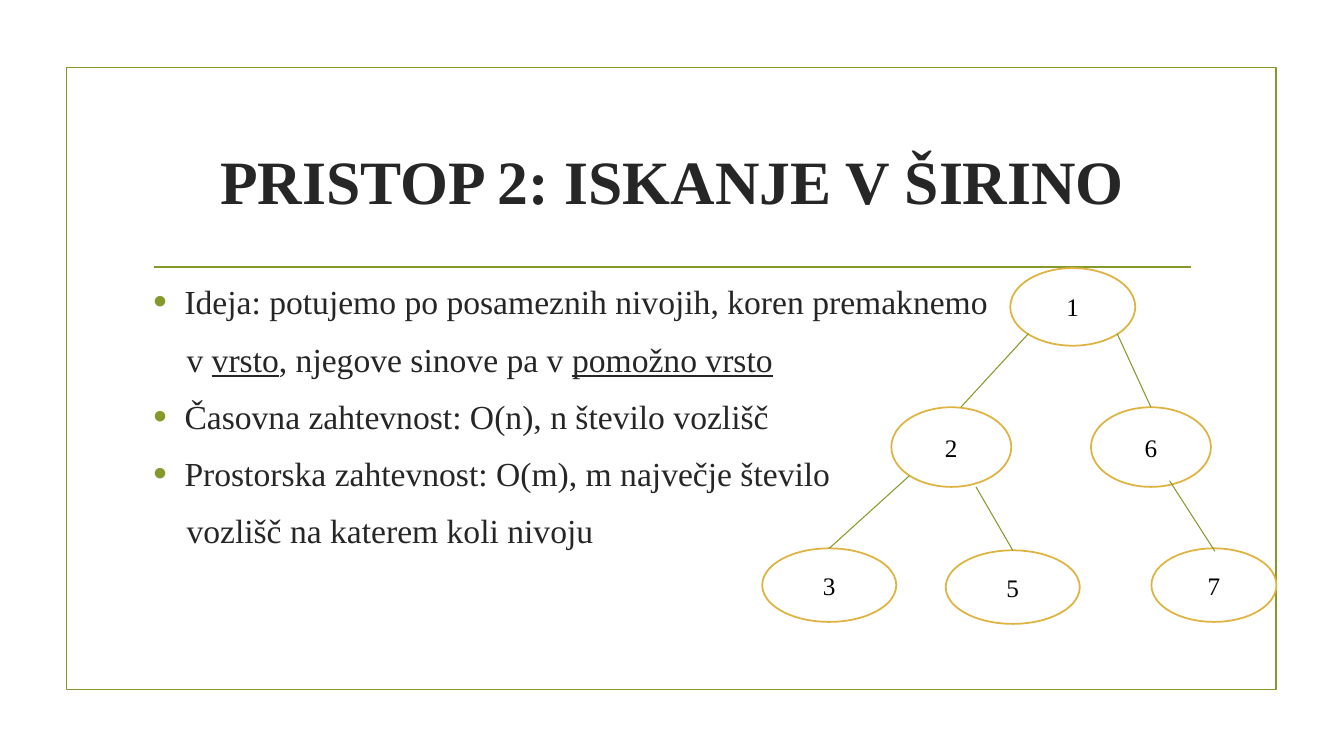
from dataclasses import dataclass
from typing import Optional

from lxml.etree import SubElement
from pptx import Presentation
from pptx.dml.color import RGBColor as RGB
from pptx.enum.shapes import MSO_CONNECTOR as CONN, MSO_SHAPE as SHAPE
from pptx.enum.text import MSO_ANCHOR as ANCHOR, MSO_AUTO_SIZE as AUTO, PP_ALIGN as ALIGN
from pptx.oxml.ns import qn
from pptx.util import Emu, Pt

PX = 9144


@dataclass(frozen=True)
class Theme:
    font: str = "Times New Roman"
    ink: str = "262626"
    node_ink: str = "000000"
    paper: str = "FFFFFF"
    green: str = "83992A"
    gold: str = "DEB340"
    title: int = 44
    body: int = 24
    node: int = 18
    outline: float = 1.25
    edge: float = 0.75
    gap: int = 6


@dataclass(frozen=True)
class Span:
    text: str
    underline: bool = False


@dataclass(frozen=True)
class Line:
    spans: tuple[Span, ...]
    bullet: bool = False


@dataclass(frozen=True)
class Node:
    label: str
    x: int
    y: int
    w: int
    h: int


@dataclass(frozen=True)
class Edge:
    x1: int
    y1: int
    x2: int
    y2: int
    child: Optional[str] = None


THEME = Theme()

LINES = (
    Line((Span("Ideja: potujemo po posameznih nivojih, koren premaknemo"),), True),
    Line((Span("v "), Span("vrsto", True), Span(", njegove sinove pa v "),
          Span("pomožno vrsto", True))),
    Line((Span("Časovna zahtevnost: O(n), n število vozlišč"),), True),
    Line((Span("Prostorska zahtevnost: O(m), m največje število"),), True),
    Line((Span("vozlišč na katerem koli nivoju"),)),
)

NODES = (
    Node("1", 1002, 266, 124, 77),
    Node("2", 884, 404, 119, 79),
    Node("6", 1082, 404, 119, 79),
    Node("3", 756, 544, 133, 73),
    Node("5", 938, 546, 133, 73),
    Node("7", 1142, 544, 124, 73),
)

EDGES = (
    Edge(1020, 331, 953, 404),
    Edge(1108, 331, 1142, 404, "6"),
    Edge(968, 483, 1004, 546, "5"),
    Edge(902, 472, 822, 544, "3"),
    Edge(1160, 477, 1205, 547),
)


def px(n: int) -> Emu:
    return Emu(n * PX)


def place(sp, x: int, y: int, w: int, h: int) -> None:
    sp.left, sp.top, sp.width, sp.height = map(px, (x, y, w, h))


def add_run(p, text: str, size: int, color: str, bold: bool = False,
            underline: bool = False) -> None:
    r = p.add_run()
    r.text = text
    r.font.name = THEME.font
    r.font.size = Pt(size)
    r.font.bold = bold
    r.font.underline = underline
    r.font.color.rgb = RGB.from_string(color)


def add_outline(s, kind, x: int, y: int, w: int, h: int, color: str):
    sp = s.shapes.add_shape(kind, px(x), px(y), px(w), px(h))
    sp.shadow.inherit = False
    sp.fill.background()
    sp.line.color.rgb = RGB.from_string(color)
    sp.line.width = Pt(THEME.outline)
    return sp


def add_line(s, x1: int, y1: int, x2: int, y2: int, width: float):
    c = s.shapes.add_connector(CONN.STRAIGHT, px(x1), px(y1), px(x2), px(y2))
    c.line.color.rgb = RGB.from_string(THEME.green)
    c.line.width = Pt(width)
    SubElement(c._element.spPr, qn("a:effectLst"))
    return c


def set_bullet(p, bullet: bool) -> None:
    pPr = p._p.get_or_add_pPr()
    pPr.set("marL", str(px(31 if bullet else 33)))
    pPr.set("indent", str(px(-31 if bullet else 0)))
    if not bullet:
        SubElement(pPr, qn("a:buNone"))
        return
    color = SubElement(pPr, qn("a:buClr"))
    SubElement(color, qn("a:srgbClr"), val=THEME.green)
    SubElement(pPr, qn("a:buSzPct"), val="115000")
    SubElement(pPr, qn("a:buFont"), typeface="Arial")
    SubElement(pPr, qn("a:buChar"), char="•")


def fill_title(sp) -> None:
    place(sp, 142, 107, 1050, 143)
    tf = sp.text_frame
    tf.auto_size = AUTO.NONE
    tf.vertical_anchor = ANCHOR.MIDDLE
    p = tf.paragraphs[0]
    p.alignment = ALIGN.CENTER
    add_run(p, "PRISTOP 2: ISKANJE V ŠIRINO", THEME.title, THEME.ink, bold=True)


def fill_body(sp) -> None:
    place(sp, 142, 274, 1050, 358)
    tf = sp.text_frame
    tf.auto_size = AUTO.NONE
    tf.vertical_anchor = ANCHOR.TOP
    for i, line in enumerate(LINES):
        p = tf.add_paragraph() if i else tf.paragraphs[0]
        p.space_before = Pt(THEME.gap if i else 0)
        p.space_after = Pt(THEME.gap)
        set_bullet(p, line.bullet)
        for span in line.spans:
            add_run(p, span.text, THEME.body, THEME.ink, underline=span.underline)


def add_node(s, node: Node):
    sp = add_outline(s, SHAPE.OVAL, node.x, node.y, node.w, node.h, THEME.gold)
    sp.fill.solid()
    sp.fill.fore_color.rgb = RGB.from_string(THEME.paper)
    tf = sp.text_frame
    tf.vertical_anchor = ANCHOR.MIDDLE
    p = tf.paragraphs[0]
    p.alignment = ALIGN.CENTER
    add_run(p, node.label, THEME.node, THEME.node_ink)
    return sp


def main() -> None:
    prs = Presentation()
    prs.slide_width, prs.slide_height = px(1333), px(750)
    s = prs.slides.add_slide(prs.slide_layouts[1])
    fill_title(s.shapes.title)
    fill_body(s.placeholders[1])
    add_outline(s, SHAPE.RECTANGLE, 66, 67, 1200, 617, THEME.green)
    add_line(s, 153, 265, 1181, 265, THEME.outline)
    nodes = {node.label: add_node(s, node) for node in NODES}
    for e in EDGES:
        c = add_line(s, e.x1, e.y1, e.x2, e.y2, THEME.edge)
        if e.child:
            c.end_connect(nodes[e.child], 0)
    prs.save("out.pptx")


if __name__ == "__main__":
    main()
